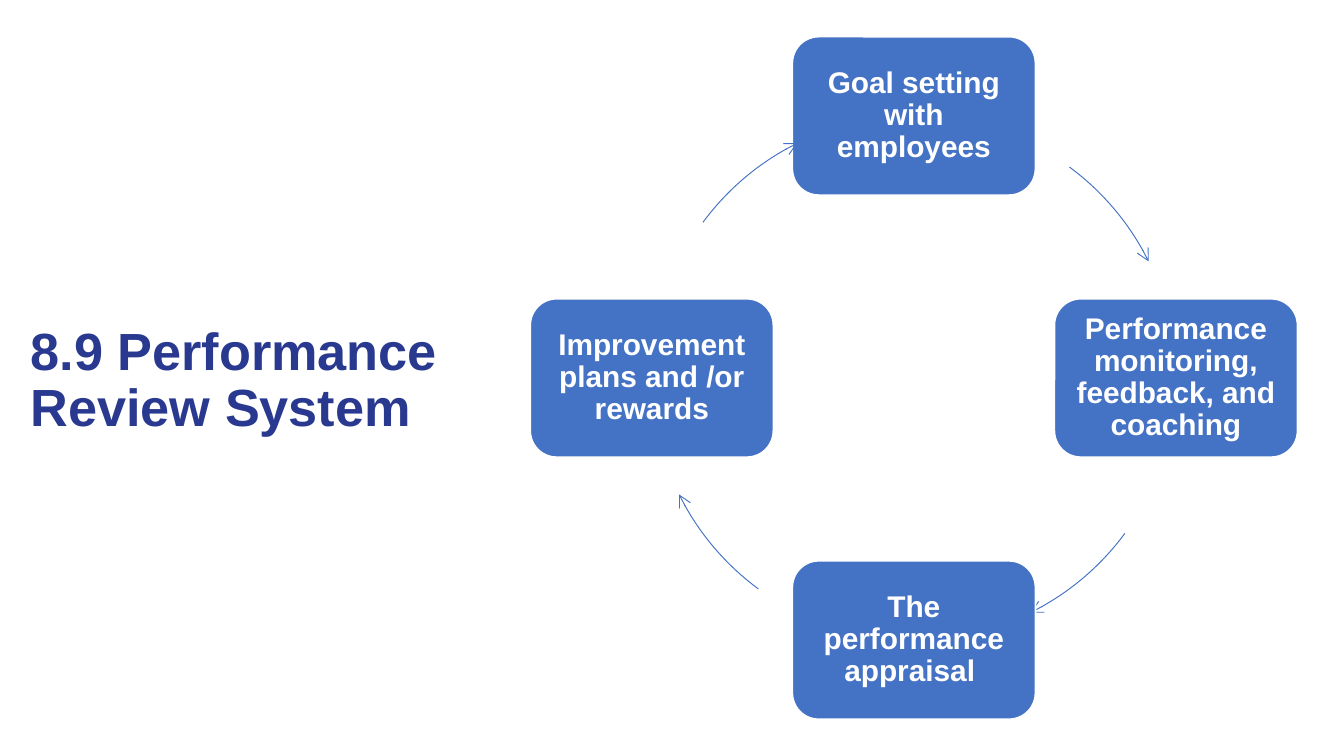
"""Build the performance review slide: a title beside a four-stage cycle."""
from math import cos, radians, sin

from lxml import etree
from pptx import Presentation
from pptx.dml.color import RGBColor
from pptx.enum.shapes import MSO_SHAPE
from pptx.enum.text import MSO_ANCHOR, PP_ALIGN
from pptx.oxml.ns import qn
from pptx.util import Inches, Pt

ROUNDED, ARC = MSO_SHAPE.ROUNDED_RECTANGLE, MSO_SHAPE.ARC
MIDDLE, BOTTOM = MSO_ANCHOR.MIDDLE, MSO_ANCHOR.BOTTOM
LEFT, CENTER = PP_ALIGN.LEFT, PP_ALIGN.CENTER

TITLE = "8.9 Performance Review System"
STAGES = [
    "Goal setting with employees",
    "Performance monitoring, feedback, and coaching",
    "The performance appraisal ",
    "Improvement plans and /or rewards",
]
COLORS = {"title": "2A3990", "stage": "4472C4", "light": "FFFFFF"}
FONT = "Arial"

SLIDE_W, SLIDE_H = 10, 5.625
CENTER_X, CENTER_Y = 0.68 * SLIDE_W, SLIDE_H / 2
RADIUS = 1.95
STAGE_W, STAGE_H = 1.81, 1.18
STEP = 360 / len(STAGES)
ARC_START, ARC_SWEEP = 36.4, 27.2
DEGREE = 0.6


def color(name):
    return RGBColor.from_string(COLORS[name])


def write(frame, words, size, ink, align, anchor):
    frame.word_wrap = True
    frame.vertical_anchor = anchor
    paragraph = frame.paragraphs[0]
    paragraph.alignment = align
    paragraph.line_spacing = 0.9
    run = paragraph.add_run()
    run.text = words
    run.font.name, run.font.size, run.font.bold = FONT, Pt(size), True
    run.font.color.rgb = color(ink)


def add_centered(slide, preset, x, y, width, height, line, weight):
    shape = slide.shapes.add_shape(
        preset, Inches(x - width / 2), Inches(y - height / 2), Inches(width), Inches(height)
    )
    shape.shadow.inherit = False
    shape.line.color.rgb = color(line)
    shape.line.width = Pt(weight)
    return shape


def add_stage(slide, words, angle):
    x = CENTER_X + RADIUS * cos(radians(angle))
    y = CENTER_Y + RADIUS * sin(radians(angle))
    stage = add_centered(slide, ROUNDED, x, y, STAGE_W, STAGE_H, "light", 1)
    stage.fill.solid()
    stage.fill.fore_color.rgb = color("stage")
    frame = stage.text_frame
    frame.margin_left = frame.margin_right = Inches(0.07)
    frame.margin_top = frame.margin_bottom = Inches(0.07)
    write(frame, words, 16, "light", CENTER, MIDDLE)


def add_arrow(slide, angle):
    arrow = add_centered(slide, ARC, CENTER_X, CENTER_Y, 2 * RADIUS, 2 * RADIUS, "stage", 0.5)
    arrow.fill.background()
    start = (angle + ARC_START) % 360
    arrow.adjustments[0] = start * DEGREE
    arrow.adjustments[1] = (start + ARC_SWEEP) % 360 * DEGREE
    etree.SubElement(arrow.line._get_or_add_ln(), qn("a:tailEnd"), type="arrow")


def main():
    deck = Presentation()
    deck.slide_width, deck.slide_height = Inches(SLIDE_W), Inches(SLIDE_H)
    slide = deck.slides.add_slide(deck.slide_layouts[6])
    title = slide.shapes.add_textbox(Inches(0.13), Inches(2.31), Inches(3.53), Inches(1))
    write(title.text_frame, TITLE, 28, "title", LEFT, BOTTOM)
    for index, words in enumerate(STAGES):
        angle = index * STEP - 90
        add_stage(slide, words, angle)
        add_arrow(slide, angle)
    deck.save("out.pptx")


if __name__ == "__main__":
    main()
